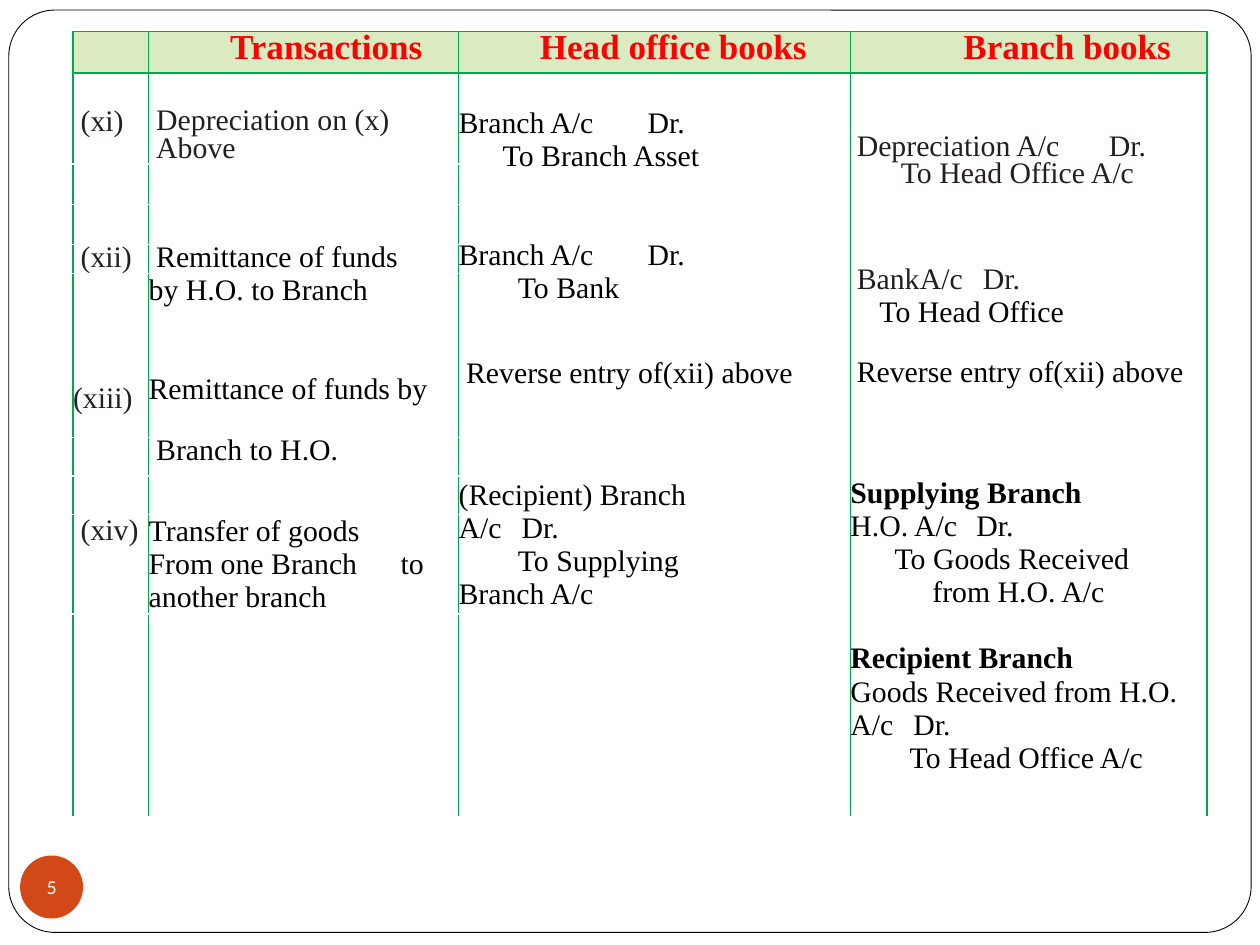
from dataclasses import dataclass

from lxml import etree
from pptx import Presentation
from pptx import util as u
from pptx.dml.color import RGBColor
from pptx.enum import shapes, text
from pptx.oxml.ns import qn

WHITE = RGBColor(0xFF, 0xFF, 0xFF)
BLACK = RGBColor(0, 0, 0)
INK = RGBColor(0x23, 0x1F, 0x20)
RED = RGBColor(0xFF, 0, 0)
GREEN = RGBColor(0x00, 0xA6, 0x50)
PALE_GREEN = RGBColor(0xDA, 0xEB, 0xC1)
ORANGE = RGBColor(0xD3, 0x48, 0x17)

SERIF = "Times New Roman"
TIGHT = 0.8
BLANK_LINE = 18.8  # points taken by one skipped line
COLUMNS = (0.6, 2.46, 3.11, 2.83)
ROWS = (0.33, 0.72, 0.32, 0.32, 0.23, 1.3, 0.23, 0.29, 0.78, 1.61)


@dataclass
class Line:
    """A paragraph: gap above in points, indents and tab stops in inches."""
    words: str
    gap: float = 0
    left: float = 0
    first: float = 0
    tabs: tuple = ()
    spacing: float = 1
    color: RGBColor = BLACK
    bold: bool = False
    size: float = 17
    align: text.PP_ALIGN = text.PP_ALIGN.LEFT


def tight(words: str, gap: float = 0, left: float = 0.06, **style) -> Line:
    return Line(words, gap, left, spacing=TIGHT, **style)


def heading(words: str, left: float) -> Line:
    return tight(words, 1.6, left, color=RED, bold=True, size=20,
                 align=text.PP_ALIGN.CENTER)


# Cell content keyed by (row, column)
CONTENT = {
    (0, 1): [heading("Transactions", 0.36)],
    (0, 2): [heading("Head office books", 0.3)],
    (0, 3): [heading("Branch books", 0.61)],
    # Entry numbers
    (1, 0): [tight("(xi)", 21.2, color=INK)],
    (4, 0): [tight("(xii)", 1.1, color=INK)],
    (5, 0): [tight("(xiii)", 65, 0, color=INK)],
    (8, 0): [tight("(xiv)", 2.5, color=INK)],
    # Transactions
    (1, 1): [tight("Depreciation on (x)", 20.6, color=INK),
             tight("Above", 1.1, color=INK)],
    (4, 1): [tight("Remittance of funds", 1.1)],
    (5, 1): [Line("by H.O. to Branch"),
             Line("Remittance of funds by", 2 * BLANK_LINE)],
    (6, 1): [tight("Branch to H.O.", 1.3)],
    (8, 1): [Line("Transfer of goods"),
             Line("From one Branch\tto", tabs=(2,)),
             Line("another branch")],
    # Head office books
    (1, 2): [Line("Branch A/c\tDr.", 19.2, tabs=(1.54,)),
             Line("To Branch Asset", first=0.35),
             Line("Branch A/c\tDr.", 2 * BLANK_LINE, tabs=(2.07,)),
             Line("To Bank", first=0.47),
             tight("Reverse entry of(xii) above", 32.8),
             Line("(Recipient) Branch\vA/c\tDr.", 51, tabs=(0.64,)),
             Line("To Supplying\vBranch A/c", first=0.47)],
    # Branch books
    (1, 3): [tight("Depreciation A/c\tDr.", 35.5, 0.05, tabs=(1.87,), color=INK),
             tight("To Head Office A/c", 0.4, 0.05, first=0.35, color=INK),
             tight("Bank\tA/c\tDr.", 45.4, 0.05, tabs=(0.91, 1.86), color=INK),
             tight("To Head Office", 3.5, 0.23),
             tight("Reverse entry of(xii) above", 19.5, 0.05),
             Line("Supplying Branch", 50.5, bold=True),
             Line("H.O. A/c\tDr.", tabs=(1.87,)),
             Line("To Goods Received", first=0.35),
             Line("from H.O. A/c", first=0.65),
             Line("Recipient Branch", BLANK_LINE, bold=True),
             Line("Goods Received from H.O. A/c\tDr.", tabs=(0.58,)),
             Line("To Head Office A/c", first=0.47)],
}


def write_line(paragraph, line: Line) -> None:
    paragraph.text = line.words
    paragraph.alignment = line.align
    paragraph.line_spacing = line.spacing
    for run in paragraph.runs:
        run.font.name = SERIF
        run.font.size = u.Pt(line.size)
        run.font.bold = line.bold
        run.font.color.rgb = line.color
    properties = paragraph._p.get_or_add_pPr()
    properties.set("marL", str(u.Inches(line.left)))
    properties.set("indent", str(u.Inches(line.first)))
    if line.tabs:
        stops = etree.SubElement(properties, qn("a:tabLst"))
        for stop in line.tabs:
            etree.SubElement(stops, qn("a:tab"), pos=str(u.Inches(stop)), algn="l")


def fill_cell(cell, lines: list) -> None:
    # The first gap becomes the top margin of the cell
    cell.margin_top = u.Pt(lines[0].gap)
    frame = cell.text_frame
    for index, line in enumerate(lines):
        paragraph = frame.add_paragraph() if index else frame.paragraphs[0]
        write_line(paragraph, line)
        if index:
            paragraph.space_before = u.Pt(line.gap)


def border_cell(cell, sides: str) -> None:
    properties = cell._tc.get_or_add_tcPr()
    for position, side in enumerate(sides):
        edge = etree.Element(qn(f"a:ln{side}"), w=str(u.Pt(1)))
        solid = etree.SubElement(edge, qn("a:solidFill"))
        etree.SubElement(solid, qn("a:srgbClr"), val=str(GREEN))
        properties.insert(position, edge)


def draw_journal(slide) -> None:
    table = slide.shapes.add_table(
        len(ROWS), len(COLUMNS), u.Inches(0.58), u.Inches(0.25),
        u.Inches(sum(COLUMNS)), u.Inches(sum(ROWS))).table
    table.first_row = table.horz_banding = False
    for column, width in zip(table.columns, COLUMNS):
        column.width = u.Inches(width)
    for row, height in zip(table.rows, ROWS):
        row.height = u.Inches(height)
    for r in range(len(ROWS)):
        for c in range(len(COLUMNS)):
            cell = table.cell(r, c)
            cell.margin_left = cell.margin_right = 0
            cell.margin_top = cell.margin_bottom = 0
            if r == 0:
                cell.fill.solid()
                cell.fill.fore_color.rgb = PALE_GREEN
            else:
                cell.fill.background()
            border_cell(cell, {0: "LRTB", 1: "LRT"}.get(r, "LR"))
    # The two book columns run as one cell below the header
    for c in (2, 3):
        table.cell(1, c).merge(table.cell(len(ROWS) - 1, c))
    for (r, c), lines in CONTENT.items():
        fill_cell(table.cell(r, c), lines)


def draw_shape(slide, kind, box: tuple, color: RGBColor):
    shape = slide.shapes.add_shape(kind, *(u.Inches(side) for side in box))
    shape.shadow.inherit = False
    shape.fill.solid()
    shape.fill.fore_color.rgb = color
    shape.line.fill.background()
    return shape


def draw_page_number(slide, number: str) -> None:
    badge = draw_shape(slide, shapes.MSO_SHAPE.OVAL, (0.16, 6.79, 0.5, 0.5), ORANGE)
    frame = badge.text_frame
    frame.margin_left = frame.margin_right = frame.margin_top = frame.margin_bottom = 0
    frame.word_wrap = False
    frame.vertical_anchor = text.MSO_ANCHOR.MIDDLE
    paragraph = frame.paragraphs[0]
    paragraph.alignment = text.PP_ALIGN.CENTER
    run = paragraph.add_run()
    run.text = number
    run.font.name = "Lato"
    run.font.size = u.Pt(10)
    run.font.color.rgb = WHITE


def main() -> None:
    deck = Presentation()
    deck.slide_width, deck.slide_height = u.Inches(10), u.Inches(7.5)
    slide = deck.slides.add_slide(deck.slide_layouts[6])
    # Rounded page border
    border = draw_shape(slide, shapes.MSO_SHAPE.ROUNDED_RECTANGLE,
                        (0.07, 0.08, 9.86, 7.32), WHITE)
    border.adjustments[0] = 0.05
    border.line.color.rgb = BLACK
    border.line.width = u.Pt(0.5)
    draw_page_number(slide, "5")
    draw_journal(slide)
    deck.save("out.pptx")


if __name__ == "__main__":
    main()
